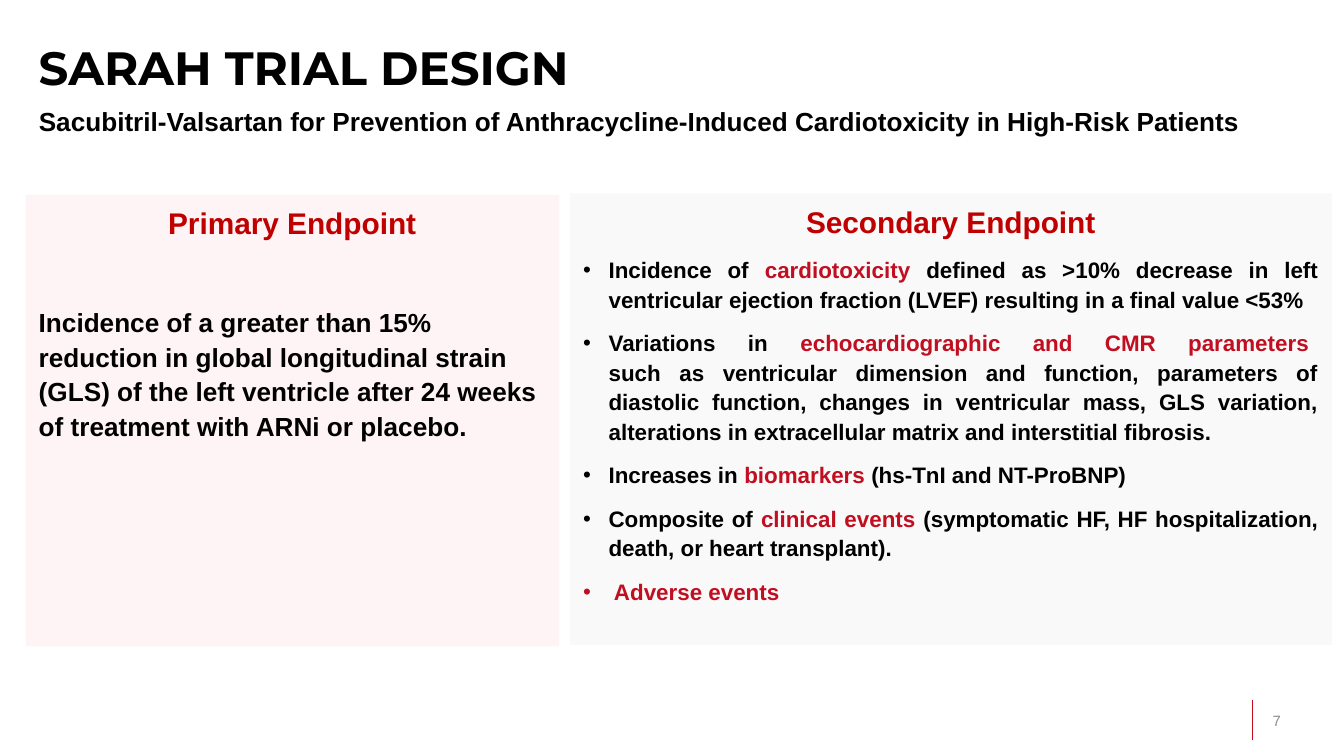
from dataclasses import dataclass

from lxml import etree
from pptx import Presentation
from pptx.dml.color import RGBColor
from pptx.enum import shapes, text
from pptx.oxml import ns
from pptx.util import Inches, Pt


@dataclass(frozen=True)
class Theme:
    black: str = "000000"
    red: str = "C10E20"
    dark: str = "C00000"
    grey: str = "8C8C8C"
    pink: str = "FEF4F5"
    pale: str = "F9F9F9"
    font: str = "Arial"
    display: str = "Montserrat"
    title: float = 25
    head: float = 16
    body: float = 14
    item: float = 12
    small: float = 8


T = Theme()
ALIGN = text.PP_ALIGN
INDENT = 0.19

# The tab keeps the short line before the break from being stretched.
GOALS = [
    "Incidence of *cardiotoxicity* defined as >10% decrease in left ventricular "
    "ejection fraction (LVEF) resulting in a final value <53%",
    "Variations in *echocardiographic and CMR parameters\t*\vsuch as ventricular "
    "dimension and function, parameters of diastolic function, changes in "
    "ventricular mass, GLS variation, alterations in extracellular matrix and "
    "interstitial fibrosis.",
    "Increases in *biomarkers* (hs-TnI and NT-ProBNP)",
    "Composite of *clinical events* (symptomatic HF, HF hospitalization, death, "
    "or heart transplant).",
    "* Adverse events*",
]


def add_bullet(para):
    props = para._p.get_or_add_pPr()
    props.set("marL", str(Inches(INDENT)))
    props.set("indent", str(-Inches(INDENT)))
    etree.SubElement(props, ns.qn("a:buFont")).set("typeface", T.font)
    etree.SubElement(props, ns.qn("a:buChar")).set("char", "•")


def write(frame, words, size=T.body, color=T.black, font=T.font, bold=True,
          align=ALIGN.LEFT, before=0, spacing=1.1, bullet=False):
    """Add a paragraph; parts between asterisks turn red."""
    para = frame.paragraphs[0]
    if para.runs:
        para = frame.add_paragraph()
    para.alignment = align
    para.line_spacing = spacing
    para.space_before = Pt(before)
    if bullet:
        add_bullet(para)
    for i, part in enumerate(words.split("*")):
        for j, piece in enumerate(part.split("\v")):
            if j:
                para.add_line_break()
            if not piece:
                continue
            run = para.add_run()
            run.text = piece
            run.font.name = font
            run.font.size = Pt(size)
            run.font.bold = bold
            run.font.color.rgb = RGBColor.from_string(T.red if i % 2 else color)


def add_box(slide, left, top, width, height, anchor=text.MSO_ANCHOR.TOP):
    box = slide.shapes.add_textbox(*map(Inches, (left, top, width, height)))
    box.text_frame.word_wrap = True
    box.text_frame.vertical_anchor = anchor
    return box.text_frame


def add_panel(slide, left, top, width, height, fill, head):
    panel = slide.shapes.add_shape(shapes.MSO_SHAPE.RECTANGLE,
                                   *map(Inches, (left, top, width, height)))
    panel.shadow.inherit = False
    panel.fill.solid()
    panel.fill.fore_color.rgb = RGBColor.from_string(fill)
    panel.line.fill.background()
    frame = panel.text_frame
    frame.word_wrap = True
    frame.vertical_anchor = text.MSO_ANCHOR.TOP
    write(frame, head, size=T.head, color=T.dark, align=ALIGN.CENTER)
    return frame


def add_header(slide, left, top, width, height):
    write(add_box(slide, left, top, width, height), "SARAH TRIAL DESIGN",
          size=T.title, font=T.display, spacing=1)
    write(add_box(slide, left, top + 0.47, width + 0.31, 0.35),
          "Sacubitril-Valsartan for Prevention of Anthracycline-Induced "
          "Cardiotoxicity in High-Risk Patients")


def add_primary(slide, left, top, width, height):
    frame = add_panel(slide, left, top, width, height, T.pink, "Primary Endpoint")
    write(frame, "Incidence of a greater than 15% reduction in global longitudinal "
          "strain (GLS) of the left ventricle after 24 weeks of treatment with "
          "ARNi or placebo.", before=33.5)


def add_second(slide, left, top, width, height):
    frame = add_panel(slide, left, top, width, height, T.pale, "Secondary Endpoint")
    for goal in GOALS:
        write(frame, goal, size=T.item, align=ALIGN.JUSTIFY, before=7.5, bullet=True)


def add_footer(slide, left, top, width, height):
    """Draw the page number with a rule at its left."""
    x = Inches(left)
    rule = slide.shapes.add_connector(shapes.MSO_CONNECTOR.STRAIGHT, x, Inches(top),
                                      x, Inches(top + height))
    rule.line.color.rgb = RGBColor.from_string(T.red)
    rule.line.width = Pt(0.5)
    etree.SubElement(rule._element.spPr, ns.qn("a:effectLst"))
    frame = add_box(slide, left + 0.05, top, width - 0.05, height,
                    text.MSO_ANCHOR.MIDDLE)
    write(frame, "7", size=T.small, color=T.grey, bold=False, spacing=1)


def main():
    deck = Presentation()
    deck.slide_width = Inches(10)
    deck.slide_height = deck.slide_width * 9 // 16
    slide = deck.slides.add_slide(deck.slide_layouts[6])
    add_header(slide, 0.19, 0.24, 9.04, 1.18)
    add_primary(slide, 0.19, 1.45, 3.97, 3.36)
    add_second(slide, 4.24, 1.44, 5.67, 3.36)
    add_footer(slide, 9.32, 5.21, 0.68, 0.3)
    deck.save("out.pptx")


if __name__ == "__main__":
    main()
